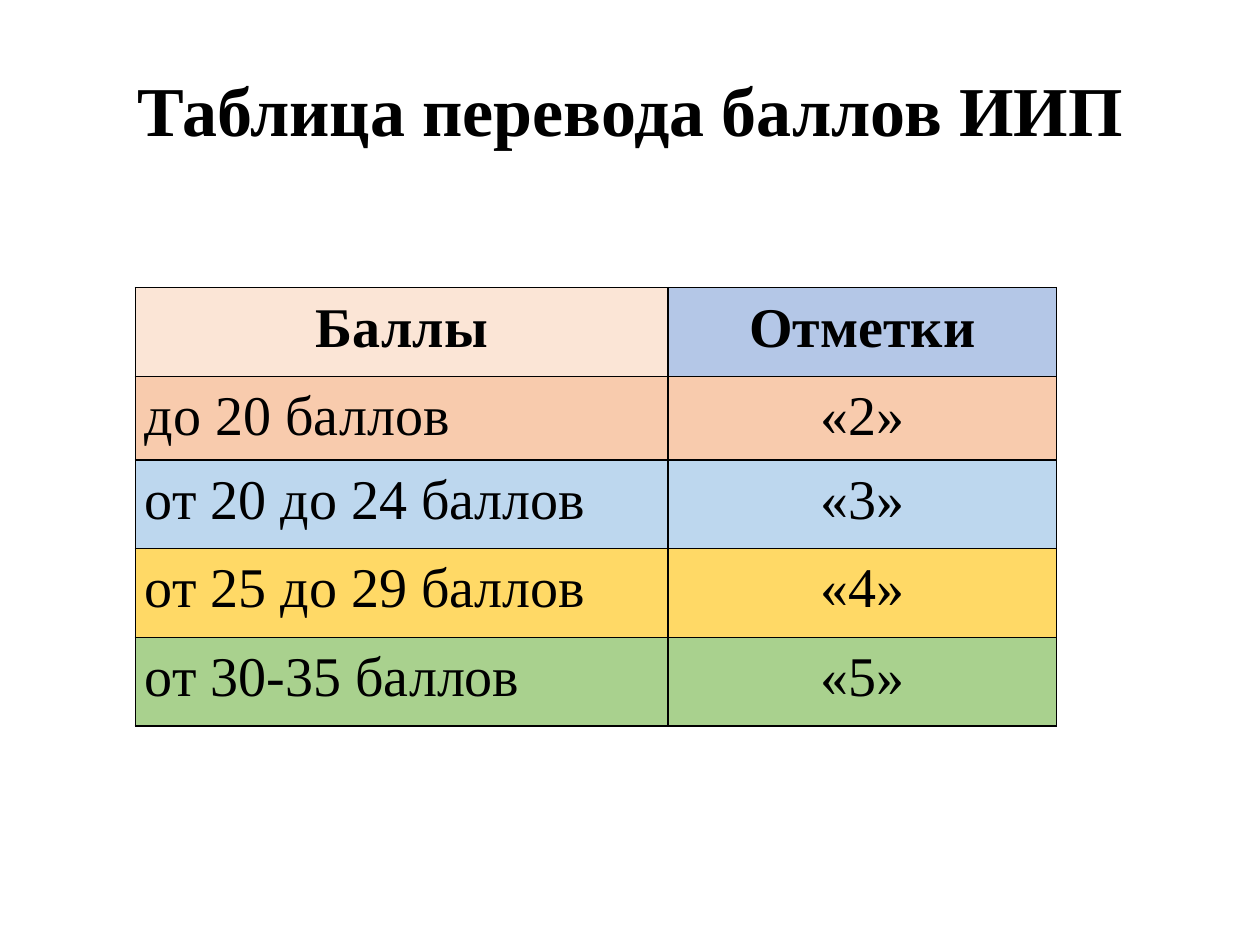
"""Build a slide with the table that converts project points into marks."""
from lxml import etree
from pptx import Presentation
from pptx import util as u
from pptx.dml.color import RGBColor
from pptx.enum import text
from pptx.oxml import ns

BLACK = RGBColor(0x00, 0x00, 0x00)
CREAM = RGBColor(0xFB, 0xE5, 0xD6)
PERIWINKLE = RGBColor(0xB4, 0xC7, 0xE7)
PEACH = RGBColor(0xF8, 0xCB, 0xAD)
SKY = RGBColor(0xBD, 0xD7, 0xEE)
GOLD = RGBColor(0xFF, 0xD9, 0x66)
GREEN = RGBColor(0xA9, 0xD1, 0x8E)

CENTER = text.PP_ALIGN.CENTER
JUSTIFY = text.PP_ALIGN.JUSTIFY

MARKS = [
    ("до 20 баллов", "«2»", PEACH),
    ("от 20 до 24 баллов", "«3»", SKY),
    ("от 25 до 29 баллов", "«4»", GOLD),
    ("от 30-35 баллов", "«5»", GREEN),
]


class SlideBuilder:
    def __init__(self, slide, font="Times New Roman", color=BLACK):
        self.slide = slide
        self.font = font
        self.color = color

    def add_words(self, frame, words, size, bold, align, spacing):
        para = frame.paragraphs[0]
        para.alignment = align
        para.line_spacing = spacing
        span = para.add_run()
        span.text = words
        span.font.name = self.font
        span.font.size = u.Pt(size)
        span.font.bold = bold
        span.font.color.rgb = self.color

    def title(self, words, left, top, width, height):
        box = self.slide.shapes.add_textbox(left, top, width, height)
        frame = box.text_frame
        frame.word_wrap = True
        frame.vertical_anchor = text.MSO_ANCHOR.MIDDLE
        self.add_words(frame, words, 40, True, CENTER, 0.9)

    def border(self, cell):
        properties = cell._tc.get_or_add_tcPr()
        for side in ("lnL", "lnR", "lnT", "lnB"):
            line = etree.SubElement(properties, ns.qn(f"a:{side}"), w=str(u.Pt(1)))
            fill = etree.SubElement(line, ns.qn("a:solidFill"))
            etree.SubElement(fill, ns.qn("a:srgbClr"), val=str(self.color))

    def cell(self, cell, words, fill, bold=False, align=CENTER):
        cell.margin_left = cell.margin_right = u.Cm(0.19)
        cell.margin_top = cell.margin_bottom = 0
        self.border(cell)
        cell.fill.solid()
        cell.fill.fore_color.rgb = fill
        self.add_words(cell.text_frame, words, 32, bold, align, 1.15)

    def table(self, left, top, widths, heights):
        frame = self.slide.shapes.add_table(
            len(heights), len(widths), left, top, sum(widths), sum(heights))
        table = frame.table
        for column, width in zip(table.columns, widths):
            column.width = width
        for row, height in zip(table.rows, heights):
            row.height = height
        return table


def main():
    deck = Presentation()
    deck.slide_width, deck.slide_height = u.Cm(25.4), u.Cm(19.05)
    page = SlideBuilder(deck.slides.add_slide(deck.slide_layouts[6]))

    page.title("Таблица перевода баллов ИИП",
               u.Cm(1.75), u.Cm(1.02), u.Cm(21.9), u.Cm(2.54))

    heights = [u.Cm(height) for height in (1.79, 1.68, 1.79, 1.79, 1.79)]
    table = page.table(u.Cm(2.73), u.Cm(5.8), [u.Cm(10.74), u.Cm(7.83)], heights)
    page.cell(table.cell(0, 0), "Баллы", CREAM, bold=True)
    page.cell(table.cell(0, 1), "Отметки", PERIWINKLE, bold=True)
    for row, (points, mark, fill) in enumerate(MARKS, start=1):
        page.cell(table.cell(row, 0), points, fill, align=JUSTIFY)
        page.cell(table.cell(row, 1), mark, fill)

    deck.save("out.pptx")


if __name__ == "__main__":
    main()
